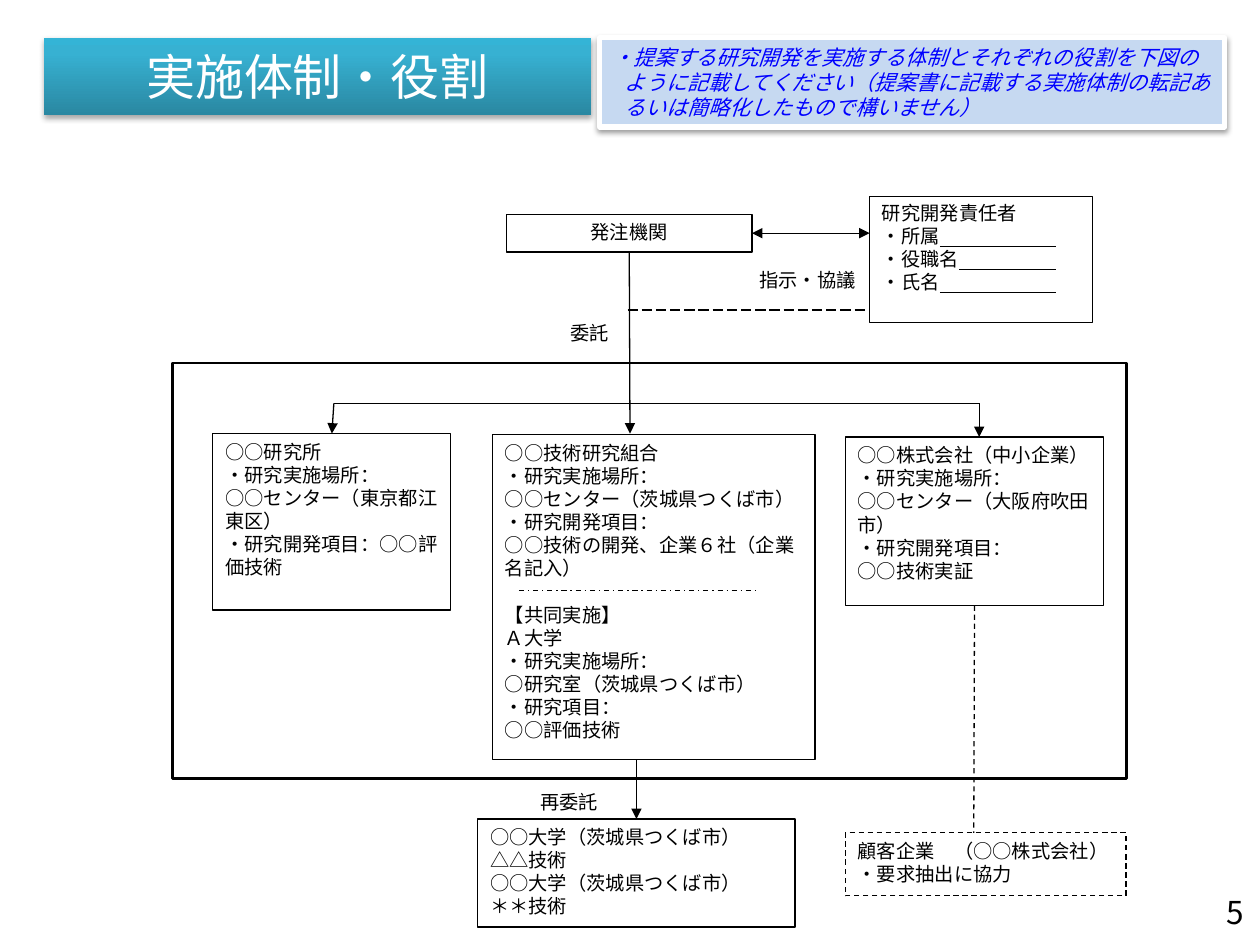
from lxml.etree import SubElement
from pptx import Presentation
from pptx.dml.color import RGBColor
from pptx.enum.dml import MSO_LINE
from pptx.enum.shapes import MSO_CONNECTOR, MSO_SHAPE
from pptx.enum.text import MSO_ANCHOR, PP_ALIGN
from pptx.oxml import parse_xml
from pptx.oxml.ns import qn
from pptx.util import Cm, Pt

SANS, LATIN = "Noto Sans CJK JP", "Calibri"
NS = 'xmlns:a="http://schemas.openxmlformats.org/drawingml/2006/main"'

# Content: places in cm (left, top, width, height)
TITLE = "実施体制・役割"
NOTE = ("・提案する研究開発を実施する体制とそれぞれの役割を下図のように記載してください"
        "（提案書に記載する実施体制の転記あるいは簡略化したもので構いません）")
PLACE = "・研究実施場所："
TOPIC = "・研究開発項目："
BOXES = {
    "agency": ((10.21, 4.32, 4.95, 0.76), ["発注機関"], dict(align="c")),
    "chief": ((17.53, 3.96, 4.5, 2.54),
              ["研究開発責任者", ("・所属", 6), ("・役職名", 5), ("・氏名", 6)],
              dict(pad=0.1)),
    "lab": ((4.29, 8.74, 4.8, 3.56),
            ["○○研究所", PLACE, "○○センター（東京都江東区）", TOPIC + "○○評価技術"], {}),
    "union": ((9.93, 8.76, 6.5, 6.55),
              ["○○技術研究組合", PLACE, "○○センター（茨城県つくば市）", TOPIC,
               "○○技術の開発、企業６社（企業名記入）", "【共同実施】", "Ａ大学", PLACE,
               "○研究室（茨城県つくば市）", "・研究項目：", "○○評価技術"],
              dict(gap=5)),
    "firm": ((17.04, 8.81, 5.21, 3.4),
             ["○○株式会社（中小企業）", PLACE, "○○センター（大阪府吹田市）", TOPIC,
              "○○技術実証"], {}),
    "sub": ((9.63, 16.51, 6.4, 2.18),
            ["○○大学（茨城県つくば市）", "△△技術", "○○大学（茨城県つくば市）", "＊＊技術"], {}),
    "client": ((17.04, 16.79, 5.66, 1.27),
               ["顧客企業　（○○株式会社）", "・要求抽出に協力"], {}),
}
FRAME = (3.48, 7.32, 19.23, 8.38)
LABELS = [
    ((15.06, 5.28, 2.59, 0.84), "指示・協議", dict(font=SANS)),
    ((11.25, 6.35, 1.3, 0.74), "委託", dict(font=LATIN, wrap=False)),
    ((10.64, 15.8, 1.68, 0.74), "再委託", dict(font=LATIN, wrap=False)),
    ((23.6, 18.06, 1.47, 0.64), "5",
     dict(size=18, align="r", anchor="m", side=0, pad=0, wrap=False)),
]
# Lines: start, end, format (start / stop: box and side to join)
LINES = [
    ((10.46, 11.91), (15.29, 11.91), dict(dash=MSO_LINE.DASH_DOT)),
    ((12.83, 15.32), (12.83, 16.51), dict(tail=True, stop=("sub", 0))),
    ((12.7, 5.08), (12.7, 8.74), dict(tail=True, start=("agency", 2))),
    ((6.73, 8.13), (19.74, 8.13), {}),
    ((6.73, 8.13), (6.69, 8.74), dict(tail=True, stop=("lab", 0))),
    ((19.74, 8.13), (19.74, 8.81), dict(tail=True)),
    ((15.16, 4.7), (17.53, 4.7), dict(head=True, tail=True, start=("agency", 3))),
    ((12.65, 6.25), (17.48, 6.25), dict(dash=MSO_LINE.LONG_DASH)),
    ((19.63, 12.22), (19.63, 16.79), dict(dash=MSO_LINE.DASH, start=("firm", 2))),
]
ALIGN = {"l": PP_ALIGN.LEFT, "c": PP_ALIGN.CENTER, "r": PP_ALIGN.RIGHT}
ANCHOR = {"t": MSO_ANCHOR.TOP, "m": MSO_ANCHOR.MIDDLE}


def paint(part, hue):
    """Give a fill or font colour from a hex string."""
    part.rgb = RGBColor.from_string(hue)


def write(shape, rows, size=11, font=SANS, hue="000000", align="l", anchor="t",
          side=0.25, pad=0.13, wrap=True, italic=False, gap=None, hang=0):
    """Write rows; a (text, count) row ends in an underlined blank."""
    frame = shape.text_frame
    frame.word_wrap = wrap
    frame.vertical_anchor = ANCHOR[anchor]
    frame.margin_left = frame.margin_right = Cm(side)
    frame.margin_top = frame.margin_bottom = Cm(pad)
    for n, row in enumerate(rows):
        para = frame.paragraphs[0] if n == 0 else frame.add_paragraph()
        para.alignment = ALIGN[align]
        para.line_spacing = Pt(size * 1.2)
        if n == gap:
            para.space_before = Pt(size * 1.2)
        if hang:
            props = para._p.get_or_add_pPr()
            props.set("marL", str(Cm(hang)))
            props.set("indent", str(-Cm(hang)))
        text, count = row if isinstance(row, tuple) else (row, 0)
        for words, under in ((text, False), ("　" * count, True)):
            if not words:
                continue
            run = para.add_run()
            run.text = words
            run.font.size, run.font.name = Pt(size), font
            run.font.italic, run.font.underline = italic, under
            paint(run.font.color, hue)
            SubElement(run._r.rPr, qn("a:ea"), typeface=font)


def put(shape, spot):
    shape.left, shape.top, shape.width, shape.height = map(Cm, spot)


def rect(spot, fill="FFFFFF", line="000000", width=0.75):
    shape = slide.shapes.add_shape(MSO_SHAPE.RECTANGLE, *map(Cm, spot))
    shape.shadow.inherit = False
    if fill:
        shape.fill.solid()
        paint(shape.fill.fore_color, fill)
    else:
        shape.fill.background()
    paint(shape.line.color, line)
    shape.line.width = Pt(width)
    return shape


def shade(shape, alpha, dist):
    """Drop a soft shadow straight down."""
    shape.shadow.inherit = False
    glow = shape._element.spPr.find(qn("a:effectLst"))
    glow.append(parse_xml(
        f'<a:outerShdw {NS} blurRad="{Pt(3.1)}" dist="{Pt(dist)}" dir="5400000" '
        f'rotWithShape="0"><a:srgbClr val="000000"><a:alpha val="{alpha * 1000}"/>'
        '</a:srgbClr></a:outerShdw>'))


def link(a, b, dash=None, head=False, tail=False, start=None, stop=None):
    line = slide.shapes.add_connector(MSO_CONNECTOR.STRAIGHT, *map(Cm, a + b))
    if start:
        line.begin_connect(boxes[start[0]], start[1])
    if stop:
        line.end_connect(boxes[stop[0]], stop[1])
    paint(line.line.color, "000000")
    line.line.width = Pt(0.75)
    if dash:
        line.line.dash_style = dash
    for tag, on in (("a:headEnd", head), ("a:tailEnd", tail)):
        if on:
            SubElement(line.line._get_or_add_ln(), qn(tag), type="triangle")
    SubElement(line._element.spPr, qn("a:effectLst"))


deck = Presentation()
deck.slide_width, deck.slide_height = Cm(25.4), Cm(19.05)
slide = deck.slides.add_slide(deck.slide_layouts[5])

# Title with gradient
title = slide.shapes.title
put(title, (0.89, 0.76, 11.02, 1.55))
stops = "".join(f'<a:gs pos="{pos}000"><a:srgbClr val="{hue}"/></a:gs>'
                for pos, hue in ((0, "2A88A2"), (80, "37B1D2"), (100, "34B4D6")))
title._element.spPr.append(parse_xml(
    f'<a:gradFill {NS} rotWithShape="1"><a:gsLst>{stops}</a:gsLst>'
    '<a:lin ang="16200000" scaled="0"/></a:gradFill>'))
shade(title, 35, 1.8)
write(title, [TITLE], size=28, font=LATIN, hue="FFFFFF", align="c", anchor="m")

# Guidance note
note = rect((12.09, 0.76, 12.6, 1.8), fill="C6D9F1", line="FFFFFF", width=3)
shade(note, 38, 1.6)
write(note, [NOTE], size=12, font=LATIN, hue="0000FF", italic=True, hang=0.25)

# Boxes, frame, lines and labels
boxes = {}
for name, (spot, rows, form) in BOXES.items():
    boxes[name] = rect(spot)
    write(boxes[name], rows, **form)
boxes["client"].line.dash_style = MSO_LINE.DASH
rect(FRAME, fill=None, width=1.5)
for a, b, form in LINES:
    link(a, b, **form)
for spot, text, form in LABELS:
    write(slide.shapes.add_textbox(*map(Cm, spot)), [text], **form)

deck.save("out.pptx")
